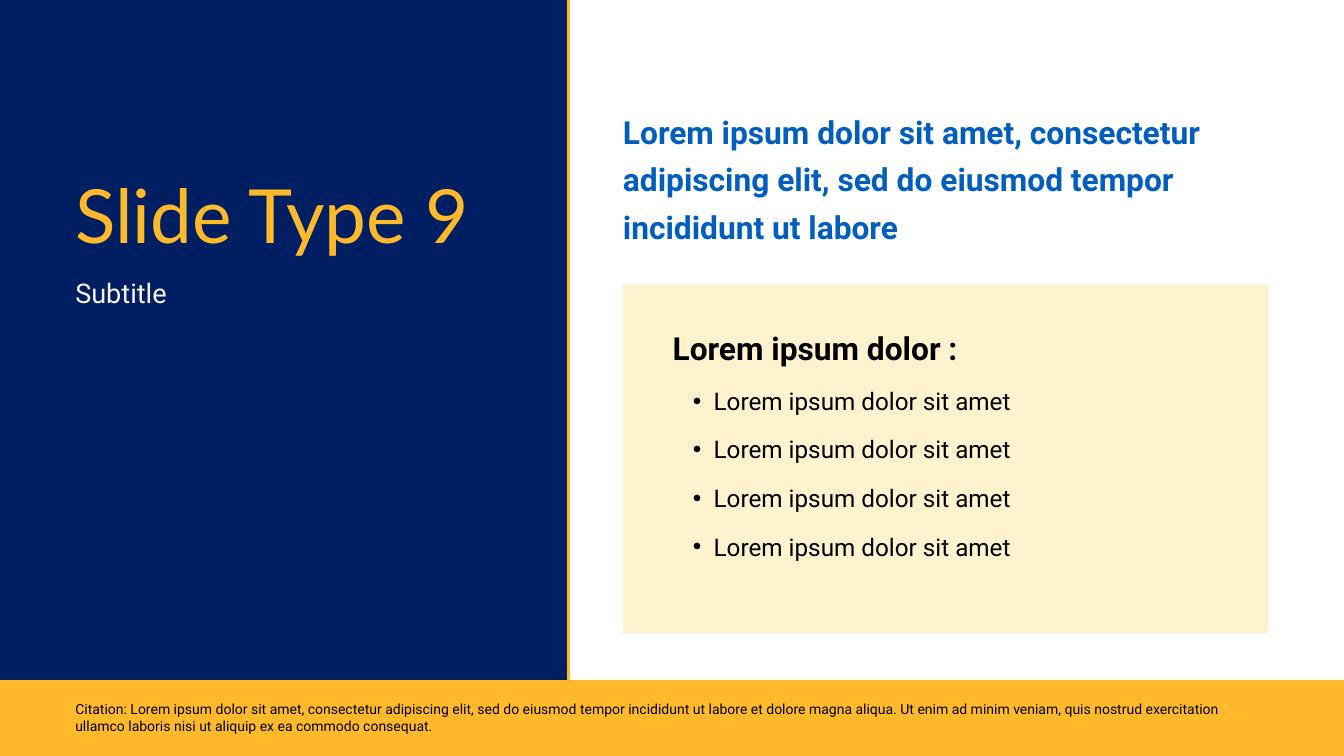
from dataclasses import dataclass

from lxml import etree
from pptx import Presentation
from pptx import util as u
from pptx.dml.color import RGBColor
from pptx.enum import shapes, text
from pptx.oxml.ns import qn


@dataclass(frozen=True)
class Theme:
    navy: str = "001F63"
    gold: str = "FFB92A"
    blue: str = "005FBE"
    cream: str = "FFF2CE"
    ivory: str = "F8F4EB"
    black: str = "000000"
    heading_font: str = "Lato"
    body_font: str = "Roboto"
    title_size: int = 80
    subtitle_size: int = 29
    heading_size: int = 34
    list_size: int = 26
    citation_size: int = 15


THEME = Theme()
WIDTH, HEIGHT = 20, 11.25
PANEL_WIDTH = 8.48
FOOTER_TOP = 10.12
MARGIN = 1.12

HEADLINE = ("Lorem ipsum dolor sit amet, consectetur adipiscing elit, "
            "sed do eiusmod tempor incididunt ut labore")
LIST_HEADING = "Lorem ipsum dolor :"
LIST_ITEMS = ["Lorem ipsum dolor sit amet"] * 4
CITATION = ("Citation: Lorem ipsum dolor sit amet, consectetur adipiscing elit, "
            "sed do eiusmod tempor incididunt ut labore et dolore magna aliqua. "
            "Ut enim ad minim veniam, quis nostrud exercitation ullamco laboris "
            "nisi ut aliquip ex ea commodo consequat.")


def add_block(slide, box, color):
    block = slide.shapes.add_shape(shapes.MSO_SHAPE.RECTANGLE, *map(u.Inches, box))
    block.shadow.inherit = False
    block.fill.solid()
    block.fill.fore_color.rgb = RGBColor.from_string(color)
    block.line.fill.background()


def add_text_box(slide, box):
    shape = slide.shapes.add_textbox(*map(u.Inches, box))
    prepare_frame(shape)
    return shape


def place_placeholder(shape, box):
    """Move a placeholder into the box and in front of the blocks drawn so far."""
    shape.left, shape.top, shape.width, shape.height = map(u.Inches, box)
    shape.element.getparent().append(shape.element)
    prepare_frame(shape)
    return shape


def prepare_frame(shape):
    frame = shape.text_frame
    frame.margin_left = frame.margin_top = frame.margin_right = frame.margin_bottom = 0
    frame.word_wrap = True
    frame.auto_size = text.MSO_AUTO_SIZE.NONE
    frame.vertical_anchor = text.MSO_ANCHOR.TOP


def format_paragraph(paragraph, size, color, spacing, font=THEME.body_font,
                     bold=False, bullet=None):
    paragraph.alignment = text.PP_ALIGN.LEFT
    paragraph.line_spacing = u.Pt(spacing)
    paragraph.space_before = paragraph.space_after = u.Pt(0)
    paragraph.level = 1 if bullet else 0
    for run in paragraph.runs:
        run.font.size = u.Pt(size)
        run.font.name = font
        run.font.bold = bold
        run.font.color.rgb = RGBColor.from_string(color)
    properties = paragraph._p.get_or_add_pPr()
    properties.set("marL", str(u.Inches(0.61 if bullet else 0)))
    properties.set("indent", str(u.Inches(-0.31 if bullet else 0)))
    if bullet:
        etree.SubElement(properties, qn("a:buFont")).set("typeface", "Arial")
        etree.SubElement(properties, qn("a:buChar")).set("char", bullet)
    else:
        etree.SubElement(properties, qn("a:buNone"))


def add_title_panel(slide, box):
    left, top, width, height = box
    add_block(slide, box, THEME.navy)
    edge = u.Inches(left + width - 0.02)
    line = slide.shapes.add_connector(
        shapes.MSO_CONNECTOR.STRAIGHT, edge, u.Inches(top), edge, u.Inches(top + height))
    line.line.color.rgb = RGBColor.from_string(THEME.gold)
    line.line.width = u.Pt(2.25)
    etree.SubElement(line.element.spPr, qn("a:effectLst"))

    title = place_placeholder(slide.shapes.title, (left + MARGIN, top + 2.62, 6.12, 1.43))
    title.text_frame.text = "Slide Type 9"
    format_paragraph(title.text_frame.paragraphs[0], THEME.title_size, THEME.gold, 88,
                     font=THEME.heading_font)
    subtitle = place_placeholder(slide.placeholders[1],
                                 (left + MARGIN, top + 4.12, 6.12, 0.47))
    subtitle.text_frame.text = "Subtitle"
    format_paragraph(subtitle.text_frame.paragraphs[0], THEME.subtitle_size,
                     THEME.ivory, 34.8)


def add_citation_band(slide, box):
    left, top, width, height = box
    add_block(slide, box, THEME.gold)
    citation = add_text_box(slide, (left + MARGIN, top + 0.31, 17.75, 0.51))
    citation.text_frame.text = CITATION
    format_paragraph(citation.text_frame.paragraphs[0], THEME.citation_size,
                     THEME.black, 18)


def add_headline(slide, box):
    headline = add_text_box(slide, box)
    headline.text_frame.text = HEADLINE
    format_paragraph(headline.text_frame.paragraphs[0], THEME.heading_size,
                     THEME.blue, 51, bold=True)


def add_list_card(slide, box):
    left, top, width, height = box
    add_block(slide, box, THEME.cream)
    card = place_placeholder(slide.placeholders[2], (left + 0.74, top + 0.52, 8.12, 3.46))
    card.text_frame.text = "\n".join([LIST_HEADING, *LIST_ITEMS])
    heading, *items = card.text_frame.paragraphs
    format_paragraph(heading, THEME.heading_size, THEME.black, 51, bold=True)
    for item in items:
        format_paragraph(item, THEME.list_size, THEME.black, 52, bullet="•")


def main():
    presentation = Presentation()
    presentation.slide_width = u.Inches(WIDTH)
    presentation.slide_height = u.Inches(HEIGHT)
    two_content = presentation.slide_layouts[3]
    slide = presentation.slides.add_slide(two_content)
    add_title_panel(slide, (0, 0, PANEL_WIDTH, HEIGHT))
    add_citation_band(slide, (0, FOOTER_TOP, WIDTH, HEIGHT - FOOTER_TOP))
    add_headline(slide, (9.27, 1.53, 9.61, 2.06))
    add_list_card(slide, (9.27, 4.23, 9.61, 5.19))
    presentation.save("out.pptx")


if __name__ == "__main__":
    main()
